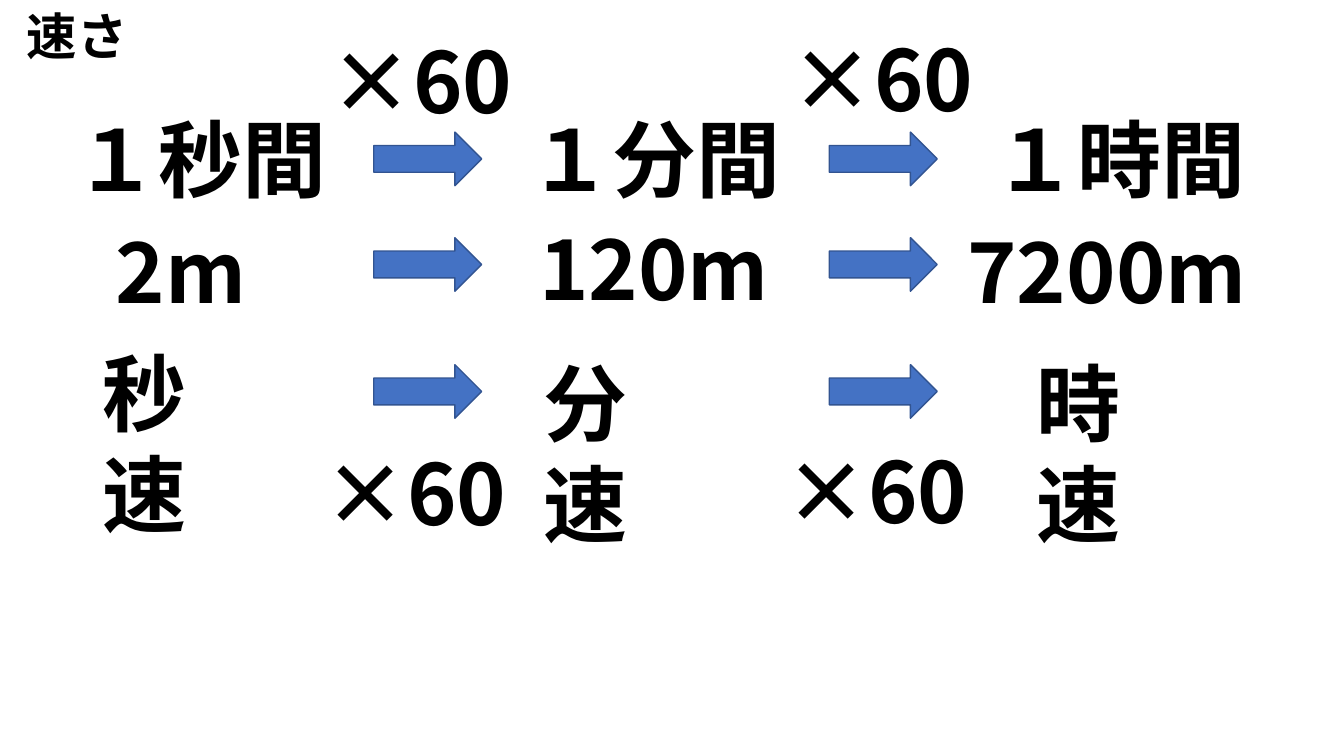
from itertools import product

from lxml.etree import SubElement
from pptx import Presentation
from pptx.dml.color import RGBColor
from pptx.enum.shapes import MSO_SHAPE
from pptx.enum.text import MSO_AUTO_SIZE
from pptx.oxml.ns import qn
from pptx.util import Cm, Pt

COLORS = {"text": "000000", "arrow": "4472C4", "outline": "325491"}


class SpeedSlide:
    font_name = "Noto Sans CJK JP"
    text_size = 60
    text_height = 2.82

    def __init__(self, presentation):
        self.slide = presentation.slides.add_slide(presentation.slide_layouts[6])

    def color(self, name):
        return RGBColor.from_string(COLORS[name])

    def add_text(self, text, left, top, width, height=text_height, size=text_size):
        shape = self.slide.shapes.add_textbox(Cm(left), Cm(top), Cm(width), Cm(height))
        frame = shape.text_frame
        frame.word_wrap = True
        frame.auto_size = MSO_AUTO_SIZE.SHAPE_TO_FIT_TEXT
        paragraph = frame.paragraphs[0]
        paragraph.add_run().text = text
        font = paragraph.font
        font.name = self.font_name
        font.size = Pt(size)
        font.bold = True
        font.color.rgb = self.color("text")
        properties = paragraph._p.pPr.find(qn("a:defRPr"))
        SubElement(properties, qn("a:ea"), typeface=self.font_name)

    def add_arrow(self, left, top):
        shape = self.slide.shapes.add_shape(
            MSO_SHAPE.RIGHT_ARROW, Cm(left), Cm(top), Cm(2.72), Cm(1.35))
        shape.shadow.inherit = False
        shape.fill.solid()
        shape.fill.fore_color.rgb = self.color("arrow")
        shape.line.color.rgb = self.color("outline")
        shape.line.width = Pt(1)


def main():
    presentation = Presentation()
    presentation.slide_width = Cm(33.87)
    presentation.slide_height = Cm(19.05)
    speed = SpeedSlide(presentation)

    speed.add_text("速さ", 0.43, 0, 4.45, 1.8, 36)

    labels = [
        ("分速　", 13.46, 8.74, 6.12),
        ("秒速　", 2.34, 8.48, 6.12),
        ("時速　", 25.86, 8.74, 6.12),
        ("１秒間", 1.63, 2.59, 6.88),
        ("１分間", 13.06, 2.59, 7.19),
        ("１時間", 24.79, 2.59, 7.19),
        ("2m", 2.67, 5.41, 5.49),
        ("120m", 13.34, 5.33, 6.32),
        ("7200m", 24.13, 5.41, 7.65),
    ]
    for label in labels:
        speed.add_text(*label)

    for top, left in product((3.33, 5.99, 9.19), (9.42, 20.9)):
        speed.add_arrow(left, top)

    for left, top in ((8.05, 0.61), (19.66, 0.56), (7.9, 11), (19.51, 10.95)):
        speed.add_text("×60　", left, top, 5.28)

    presentation.save("out.pptx")


if __name__ == "__main__":
    main()
